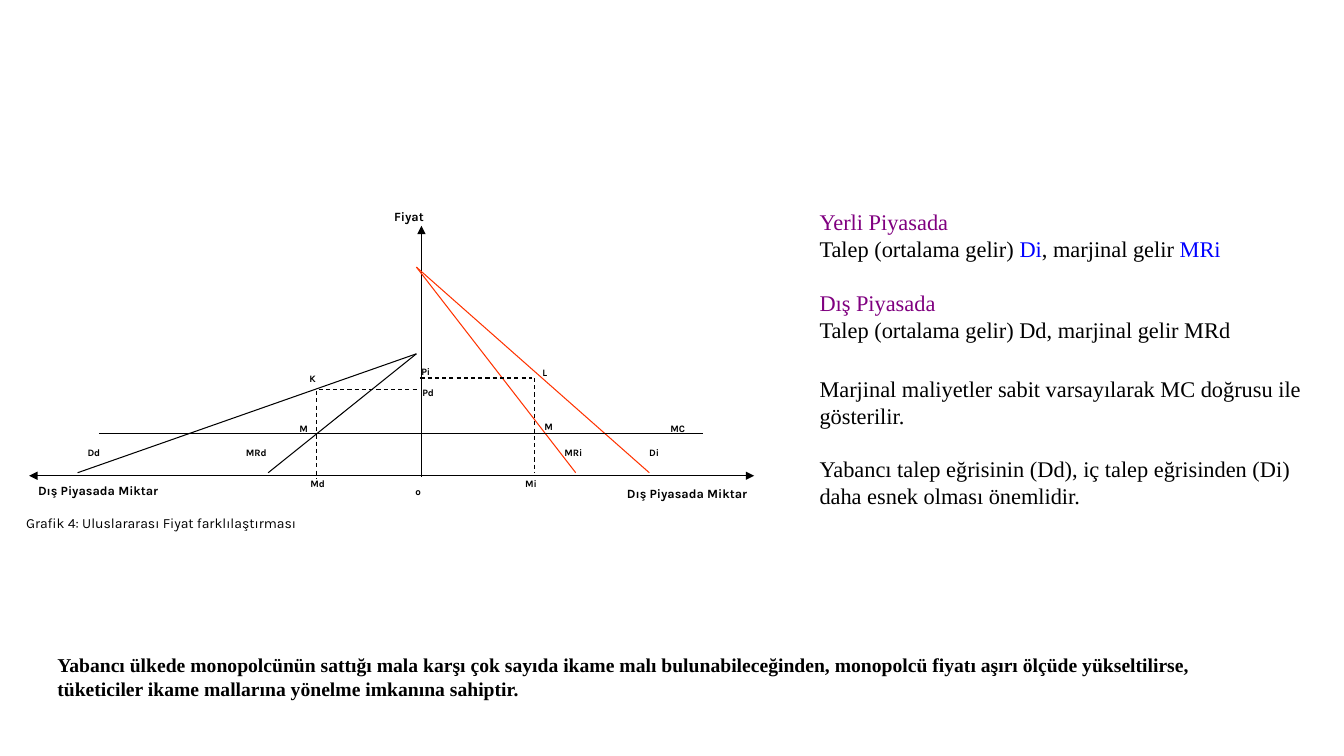
import pptx
import pptx.util
import pptx.dml.color
import pptx.enum.dml
import pptx.enum.shapes
import pptx.enum.text
import pptx.oxml
import pptx.oxml.ns
import lxml.etree

EMU_PER_PX = 9144
BLACK, RED, PURPLE, BLUE = "000000", "FF3300", "800080", "0000FF"
CHART_FONT, PROSE_FONT = "Karla", "Times New Roman"

AXIS_LABELS = [
    ("Dış Piyasada Miktar", 28, 474, 196),
    ("Dış Piyasada Miktar", 612, 477, 209),
    ("Fiyat", 381, 202, 103),
]
POINT_LABELS = [
    ("Md", 298, 469, 88), ("Mi", 511, 469, 88), ("o", 402, 477, 38),
    ("K", 297, 365, 38), ("L", 528, 359, 38),
    ("M", 287, 414, 52), ("M", 530, 412, 40), ("MC", 655, 414, 84),
    ("Pi", 408, 358, 69), ("Pd", 409, 379, 69),
    ("Dd", 77, 438, 45), ("MRd", 234, 438, 65),
    ("MRi", 550, 438, 65), ("Di", 634, 438, 45),
]
FOREIGN_PEAK, HOME_PEAK = (413, 351), (413, 265)
CURVES = [
    (FOREIGN_PEAK, (77, 469), BLACK),
    (FOREIGN_PEAK, (266, 469), BLACK),
    (HOME_PEAK, (644, 469), RED),
    (HOME_PEAK, (571, 469), RED),
    ((98, 430), (697, 430), BLACK),
]
GUIDES = [
    ((417, 375), (528, 375)), ((530, 375), (530, 469)),
    ((316, 386), (416, 386)), ((314, 388), (314, 475)),
]
EXPLANATION = [
    (0, [("Yerli Piyasada", PURPLE)]),
    (0, [("Talep (ortalama gelir) ", BLACK), ("Di", BLUE),
         (", marjinal gelir ", BLACK), ("MRi", BLUE)]),
    (19, [("Dış Piyasada", PURPLE)]),
    (0, [("Talep (ortalama gelir) Dd, marjinal gelir MRd", BLACK)]),
    (23, [("Marjinal maliyetler sabit varsayılarak MC doğrusu ile gösterilir.", BLACK)]),
    (19, [("Yabancı talep eğrisinin (Dd), iç talep eğrisinden (Di) "
           "daha esnek olması önemlidir.", BLACK)]),
]
CONCLUSION = (
    "Yabancı ülkede monopolcünün sattığı mala karşı çok sayıda ikame malı "
    "bulunabileceğinden, monopolcü fiyatı aşırı ölçüde yükseltilirse, "
    "tüketiciler ikame mallarına yönelme imkanına sahiptir."
)


def px(length):
    return pptx.util.Emu(length * EMU_PER_PX)


def color(hex_string):
    return pptx.dml.color.RGBColor.from_string(hex_string)


def add_text(slide, box, paragraphs, size, font, bold=False):
    shape = slide.shapes.add_textbox(*map(px, box))
    frame = shape.text_frame
    frame.word_wrap = True
    frame.auto_size = pptx.enum.text.MSO_AUTO_SIZE.SHAPE_TO_FIT_TEXT
    for index, (gap, pieces) in enumerate(paragraphs):
        paragraph = frame.add_paragraph() if index else frame.paragraphs[0]
        paragraph.space_before = pptx.util.Pt(gap)
        for text, hex_string in pieces:
            run = paragraph.add_run()
            run.text = text
            run.font.size = pptx.util.Pt(size)
            run.font.name = font
            run.font.bold = bold
            run.font.color.rgb = color(hex_string)


def add_labels(slide, labels, size, height):
    for text, left, top, width in labels:
        add_text(slide, (left, top, width, height), [(0, [(text, BLACK)])],
                 size, CHART_FONT, bold=True)


def add_line(slide, start, end, hex_string=BLACK, dashed=False, arrows=()):
    line = slide.shapes.add_connector(
        pptx.enum.shapes.MSO_CONNECTOR.STRAIGHT, *map(px, start + end))
    line.line.width = pptx.util.Pt(0.75)
    line.line.color.rgb = color(hex_string)
    if dashed:
        line.line.dash_style = pptx.enum.dml.MSO_LINE.DASH
    properties = line._element.spPr
    outline = properties.find(pptx.oxml.ns.qn("a:ln"))
    for arrow in arrows:
        lxml.etree.SubElement(outline, pptx.oxml.ns.qn(arrow), type="triangle")
    lxml.etree.SubElement(properties, pptx.oxml.ns.qn("a:effectLst"))


def add_diagram(slide):
    add_line(slide, (748, 472), (29, 472), arrows=("a:headEnd", "a:tailEnd"))
    add_line(slide, (418, 473), (418, 224), arrows=("a:tailEnd",))
    for start, end, hex_string in CURVES:
        add_line(slide, start, end, hex_string)
    for start, end in GUIDES:
        add_line(slide, start, end, dashed=True)
    add_labels(slide, AXIS_LABELS, 9, 25)
    add_labels(slide, POINT_LABELS, 7, 22)
    add_text(slide, (16, 506, 718, 27),
             [(0, [("Grafik 4: Uluslararası Fiyat farklılaştırması", BLACK)])],
             10, CHART_FONT)


def main():
    presentation = pptx.Presentation()
    presentation.slide_width = px(1333)
    presentation.slide_height = px(750)
    slide = presentation.slides.add_slide(presentation.slide_layouts[6])
    add_diagram(slide)
    add_text(slide, (803, 202, 504, 340), EXPLANATION, 16, PROSE_FONT)
    add_text(slide, (47, 643, 1218, 57), [(0, [(CONCLUSION, BLACK)])],
             14, PROSE_FONT, bold=True)
    presentation.save("out.pptx")


if __name__ == "__main__":
    main()
